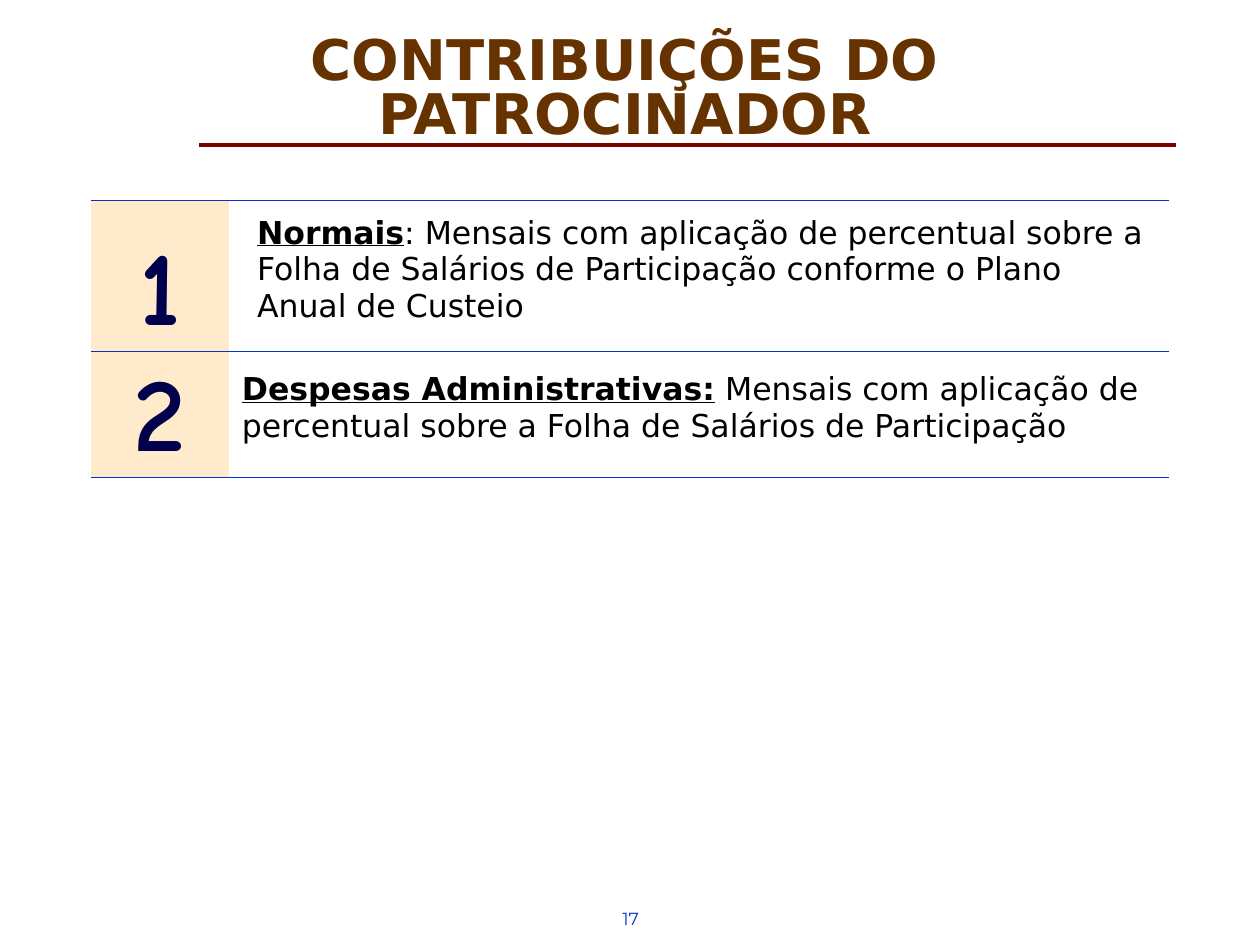
from dataclasses import dataclass

from lxml.etree import SubElement
from pptx import Presentation
from pptx.dml.color import RGBColor
from pptx.enum.shapes import MSO_CONNECTOR
from pptx.enum.text import MSO_ANCHOR, PP_ALIGN
from pptx.oxml.ns import qn
from pptx.util import Inches, Pt


@dataclass(frozen=True)
class Theme:
    title: str = "663300"
    rule: str = "800000"
    blue: str = "0033CC"
    number: str = "00004C"
    number_fill: str = "FFEBCC"
    body: str = "000000"
    body_font: str = "DejaVu Sans"
    number_font: str = "Comic Neue"
    page_font: str = "Montserrat"
    title_size: int = 32
    number_size: int = 60
    body_size: int = 18
    page_size: int = 10


THEME = Theme()
TITLE = "CONTRIBUIÇÕES DO PATROCINADOR"
PAGE_NUMBER = "17"

# Number, lead words, lead underlined up to here, remaining text, left indent, height
CONTRIBUTIONS = [
    ("1", "Normais",
     ": Mensais com aplicação de percentual sobre a Folha de Salários de "
     "Participação conforme o Plano Anual de Custeio", 0.12, 1.17),
    ("2", "Despesas Administrativas:",
     " Mensais com aplicação de percentual sobre a Folha de Salários de "
     "Participação", 0, 0.96),
]


def style_run(run, font_name, size, color, bold=False, underline=False):
    font = run.font
    font.name = font_name
    font.size = Pt(size)
    font.color.rgb = RGBColor.from_string(color)
    font.bold = bold
    font.underline = underline


def set_insets(target, left, top, right, bottom):
    target.margin_left, target.margin_top = Inches(left), Inches(top)
    target.margin_right, target.margin_bottom = Inches(right), Inches(bottom)


def add_title(slide, left, top, width, height):
    title = slide.shapes.title
    title.left, title.top = Inches(left), Inches(top)
    title.width, title.height = Inches(width), Inches(height)
    frame = title.text_frame
    frame.text = TITLE
    frame.word_wrap = True
    frame.vertical_anchor = MSO_ANCHOR.BOTTOM
    set_insets(frame, 0, 0, 0, 0)
    paragraph = frame.paragraphs[0]
    paragraph.alignment = PP_ALIGN.CENTER
    paragraph.line_spacing = 0.8
    paragraph.space_before = Pt(0)
    style_run(paragraph.runs[0], THEME.body_font, THEME.title_size,
              THEME.title, bold=True)


def add_title_rule(slide, left, top, width):
    rule = slide.shapes.add_connector(
        MSO_CONNECTOR.STRAIGHT, Inches(left), Inches(top),
        Inches(left + width), Inches(top))
    rule.line.color.rgb = RGBColor.from_string(THEME.rule)
    rule.line.width = Pt(2)
    SubElement(rule._element.spPr, qn("a:effectLst"))


def set_horizontal_borders(cell):
    """Draw the top and bottom borders and clear the side ones."""
    properties = cell._tc.get_or_add_tcPr()
    for side in ("lnL", "lnR"):
        border = SubElement(properties, qn(f"a:{side}"))
        SubElement(border, qn("a:noFill"))
    for side in ("lnT", "lnB"):
        border = SubElement(properties, qn(f"a:{side}"), w=str(Pt(1)))
        fill = SubElement(border, qn("a:solidFill"))
        SubElement(fill, qn("a:srgbClr"), val=THEME.blue)


def fill_number_cell(cell, number):
    set_horizontal_borders(cell)
    cell.fill.solid()
    cell.fill.fore_color.rgb = RGBColor.from_string(THEME.number_fill)
    cell.vertical_anchor = MSO_ANCHOR.BOTTOM
    set_insets(cell, 0.1, 0, 0.1, 0)
    cell.text_frame.text = number
    paragraph = cell.text_frame.paragraphs[0]
    paragraph.alignment = PP_ALIGN.CENTER
    paragraph.space_after = Pt(6)
    style_run(paragraph.runs[0], THEME.number_font, THEME.number_size,
              THEME.number, bold=True)


def fill_description_cell(cell, lead, detail, indent):
    set_horizontal_borders(cell)
    cell.fill.background()
    cell.vertical_anchor = MSO_ANCHOR.MIDDLE
    set_insets(cell, 0.1, 0.1, 0.1, 0.2)
    paragraph = cell.text_frame.paragraphs[0]
    paragraph.space_after = Pt(6)
    if indent:
        paragraph._p.get_or_add_pPr().set("marL", str(Inches(indent)))
    for text, is_lead in ((lead, True), (detail, False)):
        run = paragraph.add_run()
        run.text = text
        style_run(run, THEME.body_font, THEME.body_size, THEME.body,
                  bold=is_lead, underline=is_lead)


def add_contributions_table(slide, left, top, width, number_width):
    heights = [row[-1] for row in CONTRIBUTIONS]
    table = slide.shapes.add_table(
        len(CONTRIBUTIONS), 2, Inches(left), Inches(top),
        Inches(width), Inches(sum(heights))).table
    table.first_row = False
    table.horz_banding = False
    table.columns[0].width = Inches(number_width)
    table.columns[1].width = Inches(width - number_width)
    for index, (number, lead, detail, indent, height) in enumerate(CONTRIBUTIONS):
        table.rows[index].height = Inches(height)
        fill_number_cell(table.cell(index, 0), number)
        fill_description_cell(table.cell(index, 1), lead, detail, indent)


def add_page_number(slide, left, top, width, height):
    box = slide.shapes.add_textbox(
        Inches(left), Inches(top), Inches(width), Inches(height))
    frame = box.text_frame
    frame.word_wrap = True
    frame.text = PAGE_NUMBER
    style_run(frame.paragraphs[0].runs[0], THEME.page_font, THEME.page_size,
              THEME.blue)


def main():
    presentation = Presentation()
    presentation.slide_width = Inches(10)
    presentation.slide_height = Inches(7.5)
    slide = presentation.slides.add_slide(presentation.slide_layouts[5])
    add_title_rule(slide, 1.58, 1.15, 7.75)
    add_page_number(slide, 4.84, 7.16, 0.71, 0.34)
    add_title(slide, 0.43, 0.4, 9.06, 0.75)
    add_contributions_table(slide, 0.72, 1.59, 8.56, 1.1)
    presentation.save("out.pptx")


if __name__ == "__main__":
    main()
